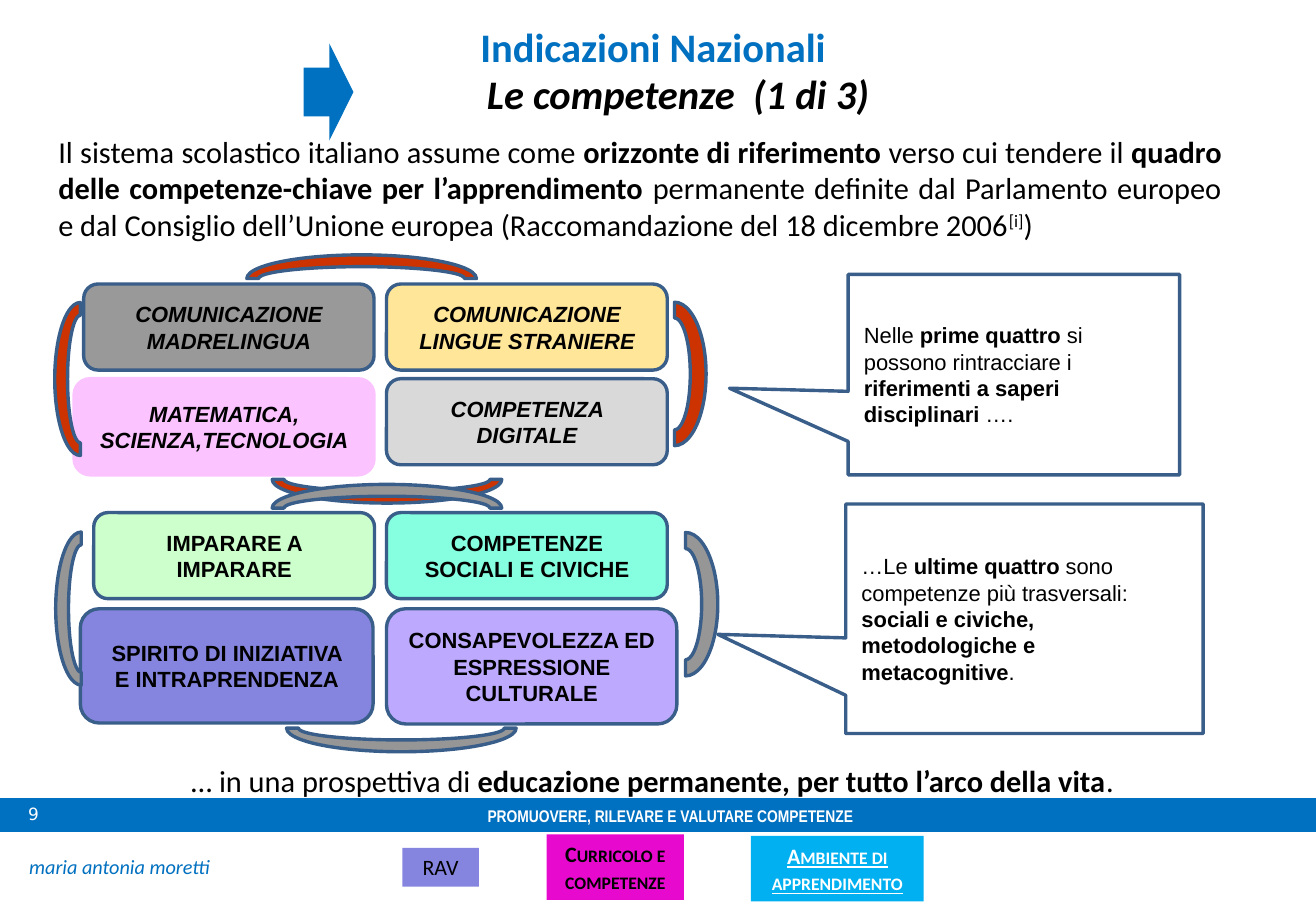
from pptx import Presentation
from pptx.dml.color import RGBColor
from pptx.enum.shapes import MSO_SHAPE
from pptx.enum.text import MSO_ANCHOR, PP_ALIGN
from pptx.util import Cm, Pt

RECT, ROUNDED = MSO_SHAPE.RECTANGLE, MSO_SHAPE.ROUNDED_RECTANGLE
ARC, CALLOUT = MSO_SHAPE.BLOCK_ARC, MSO_SHAPE.RECTANGULAR_CALLOUT
ARROW = MSO_SHAPE.RIGHT_ARROW
TOP, MIDDLE = MSO_ANCHOR.TOP, MSO_ANCHOR.MIDDLE
LEFT, CENTER, JUSTIFY = PP_ALIGN.LEFT, PP_ALIGN.CENTER, PP_ALIGN.JUSTIFY
BLUE, OUTLINE, WHITE, BLACK = "0070C0", "395E89", "FFFFFF", "000000"

deck = Presentation()
deck.slide_width, deck.slide_height = Cm(27.51), Cm(19.05)
page = deck.slides.add_slide(deck.slide_layouts[6])


def add_item(place, kind=None, fill=None, line=None, adjust=(), rotation=0):
    """Add a preset shape, or a text box when no kind is given."""
    place = [Cm(length) for length in place]
    if kind is None:
        return page.shapes.add_textbox(*place)
    shape = page.shapes.add_shape(kind, *place)
    shape.shadow.inherit = False
    shape.rotation = rotation
    for index, value in enumerate(adjust):
        shape.adjustments[index] = value
    if fill:
        shape.fill.solid()
        shape.fill.fore_color.rgb = RGBColor.from_string(fill)
    else:
        shape.fill.background()
    if line:
        shape.line.color.rgb = RGBColor.from_string(line)
        shape.line.width = Pt(2)
    else:
        shape.line.fill.background()
    return shape


def write(box, *spans, size=13, font="Calibri", color=BLACK, bold=False,
          italic=False, underline=False, small_caps=False, align=CENTER,
          anchor=TOP, margins=(0.25, 0.13), wrap=True):
    """Fill a box with spans; a span is text or a (text, style) pair."""
    frame = box.text_frame
    frame.word_wrap = wrap
    frame.vertical_anchor = anchor
    frame.margin_left = frame.margin_right = Cm(margins[0])
    frame.margin_top = frame.margin_bottom = Cm(margins[1])
    para = frame.paragraphs[0]
    para.alignment = align
    for span in spans:
        text, style = (span, "") if isinstance(span, str) else span
        run = para.add_run()
        run.text = text
        run.font.name, run.font.size = font, Pt(size)
        run.font.color.rgb = RGBColor.from_string(color)
        run.font.bold = bold or style == "bold"
        run.font.italic, run.font.underline = italic, underline
        if small_caps:
            run.font._element.set("cap", "small")
        if style == "superscript":
            run.font._element.set("baseline", "30000")


# Footer band, author and navigation labels
add_item((0, 16.69, 27.51, 0.71), RECT, BLUE)
write(add_item((0.41, 16.71, 0.97, 0.61)), "9", size=10, font="DejaVu Sans",
      color=WHITE, align=LEFT, margins=(0.18, 0.1), wrap=False)
write(add_item((1.96, 16.74, 24.1, 0.61)),
      "PROMUOVERE, RILEVARE E VALUTARE COMPETENZE", size=10,
      font="Arial Narrow", color=WHITE, bold=True, margins=(0.18, 0.1))
write(add_item((0.36, 17.73, 4.39, 0.76)), "maria antonia moretti", size=12,
      color=BLUE, italic=True, align=LEFT)
write(add_item((15.7, 17.48, 3.61, 1.37), RECT, "00B0F0"),
      "Ambiente di apprendimento", color=WHITE, bold=True, underline=True,
      small_caps=True, anchor=MIDDLE)
write(add_item((11.43, 17.45, 2.87, 1.37), RECT, "E709CD"),
      "Curricolo e competenze", bold=True, small_caps=True, anchor=MIDDLE)
write(add_item((8.41, 17.73, 1.6, 0.81), RECT, "8585E0"), "RAV")

# Titles, introduction and closing line
write(add_item((0.36, 0.33, 26.59, 1.19)), "Indicazioni Nazionali", size=24,
      color=BLUE, bold=True)
write(add_item((1.17, 1.32, 26.01, 1.27)), "Le competenze  (1 di 3)", size=24,
      bold=True, italic=True)
add_item((6.35, 0.91, 1.04, 2.03), ARROW, BLUE, adjust=(0.5, 0.486))
write(add_item((0.97, 2.64, 24.82, 2.57)),
      "Il sistema scolastico italiano assume come ",
      ("orizzonte di riferimento ", "bold"),
      "verso cui tendere il ",
      ("quadro delle competenze-chiave per l’apprendimento ", "bold"),
      "permanente definite dal Parlamento europeo e dal Consiglio dell’Unione "
      "europea (Raccomandazione del 18 dicembre 2006",
      ("[i]", "superscript"), ")", size=18, align=JUSTIFY, anchor=MIDDLE)
write(add_item((1.65, 15.8, 23.98, 1.02)),
      "… in una prospettiva di ",
      ("educazione permanente, per tutto l’arco della vita", "bold"), ".",
      size=18, anchor=MIDDLE)

# Two sets of four competences: boxes, surrounding arcs, callout
subject_set = {
    "italic": True,
    "boxes": [
        ("COMUNICAZIONE MADRELINGUA", (1.75, 5.94, 6.07, 1.8), "999999", OUTLINE),
        ("COMUNICAZIONE LINGUE STRANIERE", (8.08, 5.94, 5.87, 1.8), "FFE699", OUTLINE),
        ("MATEMATICA, SCIENZA,TECNOLOGIA", (1.55, 7.92, 6.27, 2.01), "FBC3FF", "FBC3FF"),
        ("COMPETENZA DIGITALE", (8.08, 7.92, 5.87, 1.8), "D9D9D9", OUTLINE),
    ],
    "arc_color": "CC3300",
    "arcs": [
        ((5.16, 5.33, 4.8, 0.99), 0),
        ((5.69, 9.53, 4.8, 0.99), 180),
        ((12.6, 7.16, 3, 1.32), 90),
        ((0.08, 7.39, 3.2, 1.07), 270),
    ],
    "callout": (17.73, 5.74, 6.93, 4.19),
    "callout_fill": WHITE,
    "comment": ["Nelle ", ("prime quattro ", "bold"), "si possono rintracciare i ",
                ("riferimenti a saperi disciplinari ", "bold"), "…."],
}
transversal_set = {
    "italic": False,
    "boxes": [
        ("IMPARARE A IMPARARE", (1.96, 10.72, 5.87, 1.8), "CCFFCC", OUTLINE),
        ("COMPETENZE SOCIALI E CIVICHE", (8.08, 10.72, 5.87, 1.8), "85FFE0", OUTLINE),
        ("SPIRITO DI INIZIATIVA E INTRAPRENDENZA", (1.68, 12.73, 6.12, 2.39),
         "8585E0", OUTLINE),
        ("CONSAPEVOLEZZA ED ESPRESSIONE CULTURALE", (8.08, 12.73, 6.07, 2.41),
         "BDAAFF", OUTLINE),
    ],
    "arc_color": "969696",
    "arcs": [
        ((12.83, 11.96, 3, 1.35), 90),
        ((0.1, 12.19, 3.2, 1.07), 270),
        ((5.99, 14.73, 4.8, 0.99), 180),
        ((5.69, 10.13, 4.8, 0.99), 0),
    ],
    "callout": (17.68, 10.54, 7.47, 4.8),
    "callout_fill": None,
    "comment": ["…Le ", ("ultime quattro ", "bold"),
                "sono competenze più trasversali: ",
                ("sociali e civiche, metodologiche e metacognitive", "bold"), "."],
}
for group in (subject_set, transversal_set):
    for label, place, fill, line in group["boxes"]:
        write(add_item(place, ROUNDED, fill, line, (0.167,)), label,
              font="Arial", bold=True, italic=group["italic"], anchor=MIDDLE,
              margins=(0.33, 0.18))
    for place, rotation in group["arcs"]:
        add_item(place, ARC, group["arc_color"], OUTLINE, (108, 0, 0.25), rotation)
    callout = add_item(group["callout"], CALLOUT, group["callout_fill"], OUTLINE,
                       (-0.858, 0.068))
    write(callout, *group["comment"], font="Arial", align=LEFT, anchor=MIDDLE,
          margins=(0.33, 0.18))

deck.save("out.pptx")
